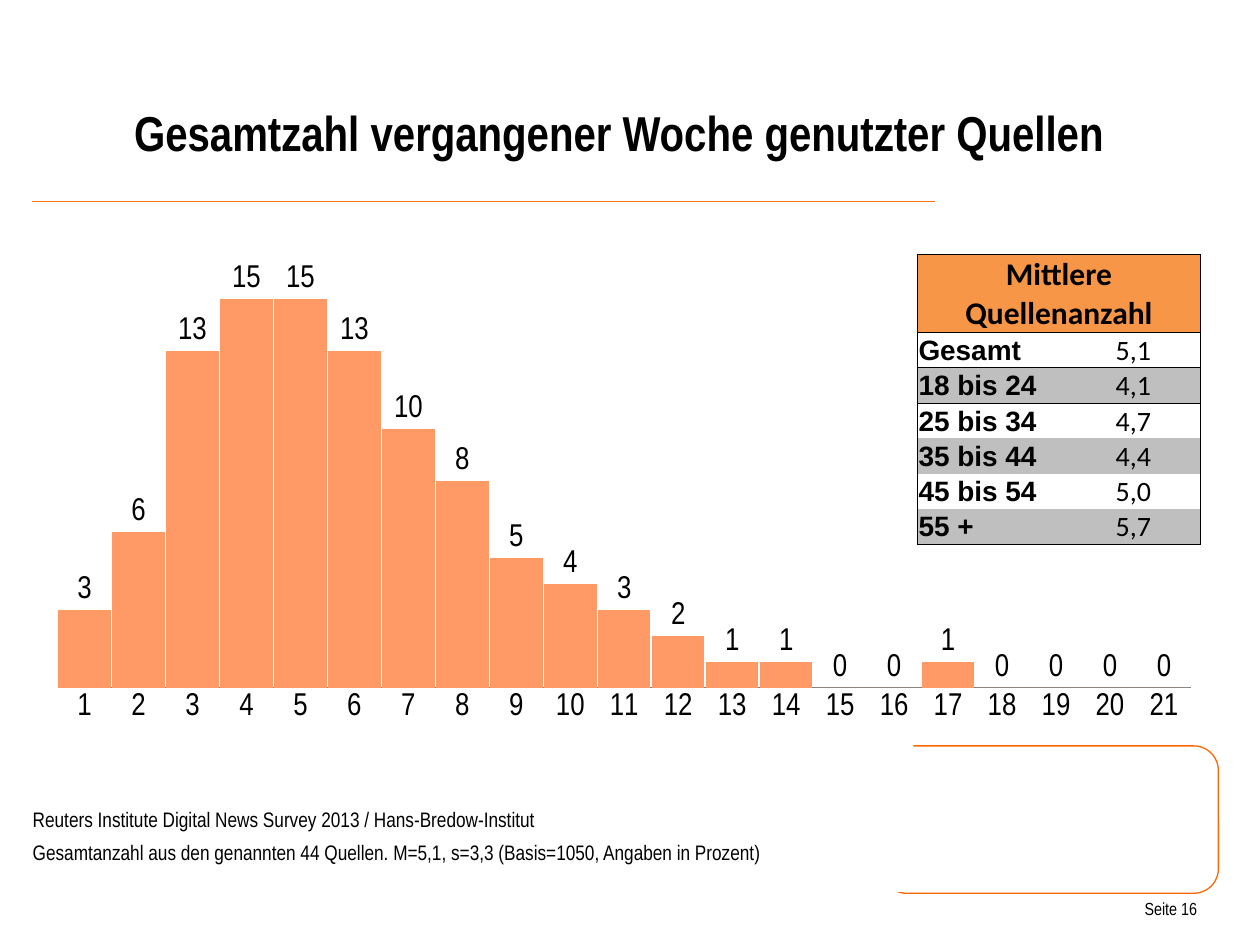
from lxml import etree
from pptx import Presentation
from pptx import util as u
from pptx.chart.data import CategoryChartData
from pptx.dml.color import RGBColor
from pptx.enum import chart as ch, shapes, text
from pptx.oxml import parse_xml
from pptx.oxml.ns import nsdecls, qn

PX = 9144  # 100 px to the inch
FONT = "Arial Narrow"
ALIGN = text.PP_ALIGN
ANCHOR = text.MSO_ANCHOR


def rgb(code):
    return RGBColor.from_string(code)


def write(par, words, size, name=FONT, bold=False, align=ALIGN.LEFT):
    """Add one formatted black run to a paragraph."""
    par.alignment = align
    run = par.add_run()
    run.text = words
    font = run.font
    font.size, font.name, font.bold = u.Pt(size), name, bold
    font.color.rgb = rgb("000000")


prs = Presentation()
prs.slide_width, prs.slide_height = 1000 * PX, 750 * PX
slide = prs.slides.add_slide(prs.slide_layouts[5])
objs = slide.shapes

# Frame at the lower right, open on its left side
frame = objs.add_shape(shapes.MSO_SHAPE.ROUNDED_RECTANGLE,
                       700 * PX, 592 * PX, 267 * PX, 117 * PX)
frame.shadow.inherit = False
frame.fill.background()
frame.line.color.rgb = rgb("FF6600")
frame.line.width = u.Pt(0.75)

mask = objs.add_shape(shapes.MSO_SHAPE.RECTANGLE,
                      692 * PX, 575 * PX, 33 * PX, 133 * PX)
mask.shadow.inherit = False
mask.fill.solid()
mask.fill.fore_color.rgb = rgb("FFFFFF")
mask.line.fill.background()

rule = objs.add_connector(shapes.MSO_CONNECTOR.STRAIGHT,
                          742 * PX, 160 * PX, 25 * PX, 160 * PX)
rule.line.color.rgb = rgb("FF7310")
rule.line.width = u.Pt(1)
etree.SubElement(rule._element.spPr, qn("a:effectLst"))

# Title
title = objs.title
title.left, title.top = 25 * PX, 25 * PX
title.width, title.height = 942 * PX, 108 * PX
frame = title.text_frame
frame.auto_size = text.MSO_AUTO_SIZE.NONE
frame.vertical_anchor = ANCHOR.BOTTOM
frame.margin_left, frame.margin_right = 0, 10 * PX
frame.margin_top = frame.margin_bottom = 5 * PX
write(frame.paragraphs[0], "Gesamtzahl vergangener Woche genutzter Quellen",
      28, bold=True, align=ALIGN.CENTER)

# Page number and source note
notes = [
    ((867, 708, 83, 33), (4, 0), 10, ALIGN.RIGHT, ["Seite 16"]),
    ((26, 635, 750, 55), (0, 10), 12, ALIGN.LEFT, [
        "Reuters Institute Digital News Survey 2013 / Hans-Bredow-Institut",
        "Gesamtanzahl aus den genannten 44 Quellen. M=5,1, s=3,3 "
        "(Basis=1050, Angaben in Prozent)"]),
]
for place, (left, right), size, align, lines in notes:
    frame = objs.add_textbox(*(n * PX for n in place)).text_frame
    frame.word_wrap = True
    frame.margin_left, frame.margin_right = left * PX, right * PX
    frame.margin_top = frame.margin_bottom = 5 * PX
    for i, line in enumerate(lines):
        par = frame.add_paragraph() if i else frame.paragraphs[0]
        par.space_before = u.Pt(0.2 * size if i else 0)
        par.space_after = u.Pt(0.2 * size)
        write(par, line, size, align=align)

# Column chart
data = CategoryChartData(number_format="###0")
data.categories = [str(n) for n in range(1, 22)]
data.add_series("Prozent", [3, 6, 13, 15, 15, 13, 10, 8, 5, 4, 3,
                            2, 1, 1, 0, 0, 1, 0, 0, 0, 0])
chart = objs.add_chart(ch.XL_CHART_TYPE.COLUMN_CLUSTERED, 27 * PX, 202 * PX,
                       937 * PX, 378 * PX, data).chart
chart.has_legend = chart.has_title = False
chart.font.name, chart.font.size = FONT, u.Pt(18)
chart.font.color.rgb = rgb("000000")

scale = chart.value_axis
scale.minimum_scale, scale.maximum_scale = 0, 16
scale.has_major_gridlines = False
scale.visible = False
base = chart.category_axis
base.major_tick_mark = ch.XL_TICK_MARK.NONE
base.format.line.color.rgb = rgb("808080")

plot = chart.plots[0]
plot.gap_width, plot.overlap = 3, -25
plot.vary_by_categories = False
bars = plot.series[0].format.fill
bars.solid()
bars.fore_color.rgb = rgb("FF9966")
plot.has_data_labels = True
tags = plot.data_labels
tags.show_value = True
tags.number_format, tags.number_format_is_linked = "###0", False
tags.position = ch.XL_LABEL_POSITION.OUTSIDE_END
tags.font.name, tags.font.size = FONT, u.Pt(18)
tags.font.color.rgb = rgb("000000")

area = chart._chartSpace.chart.plotArea
for old in area.findall(qn("c:layout")):
    area.remove(old)
area.insert(0, parse_xml(
    f'<c:layout {nsdecls("c")}><c:manualLayout><c:layoutTarget val="inner"/>'
    '<c:xMode val="edge"/><c:yMode val="edge"/><c:x val="0.02"/>'
    '<c:y val="0.04"/><c:w val="0.96"/><c:h val="0.87"/>'
    '</c:manualLayout></c:layout>'))

# Table of means
means = [("Gesamt", "5,1"), ("18 bis 24", "4,1"), ("25 bis 34", "4,7"),
         ("35 bis 44", "4,4"), ("45 bis 54", "5,0"), ("55 +", "5,7")]
last = len(means)
table = objs.add_table(last + 1, 2, 728 * PX, 202 * PX,
                       225 * PX, 230 * PX).table
table.first_row = table.horz_banding = False
table._tbl.tblPr[0].text = "{2D5ABB26-0587-4C30-8999-92F81FD0307C}"  # no style
for col, wide in zip(table.columns, (118, 107)):
    col.width = wide * PX
table.cell(0, 0).merge(table.cell(0, 1))
for r, row in enumerate(table.rows):
    row.height = (28 if r else 62) * PX
    for c, cell in enumerate(row.cells):
        cell.margin_left = cell.margin_right = cell.margin_top = PX
        cell.margin_bottom = 0
        cell.vertical_anchor = ANCHOR.MIDDLE if r and not c else ANCHOR.BOTTOM
        edges = [("L", c == 0), ("R", c == 1 or r == 0),
                 ("T", r <= 2), ("B", r in (0, 1, last))]
        for side, shown in edges:
            if shown:
                cell._tc.get_or_add_tcPr().append(parse_xml(
                    f'<a:ln{side} {nsdecls("a")} w="6350"><a:solidFill>'
                    f'<a:srgbClr val="000000"/></a:solidFill></a:ln{side}>'))
        if r in (1, 3, 5):
            cell.fill.background()
        else:
            cell.fill.solid()
            cell.fill.fore_color.rgb = rgb("BFBFBF" if r else "F79646")
        par = cell.text_frame.paragraphs[0]
        if r and c:
            write(par, means[r - 1][1], 16, "Calibri", align=ALIGN.CENTER)
        elif r:
            write(par, means[r - 1][0], 16, "Arial", True)
        elif c == 0:
            write(par, "Mittlere", 18, "Calibri", True, ALIGN.CENTER)
            par.add_line_break()
            write(par, "Quellenanzahl", 18, "Calibri", True, ALIGN.CENTER)

prs.save("out.pptx")
